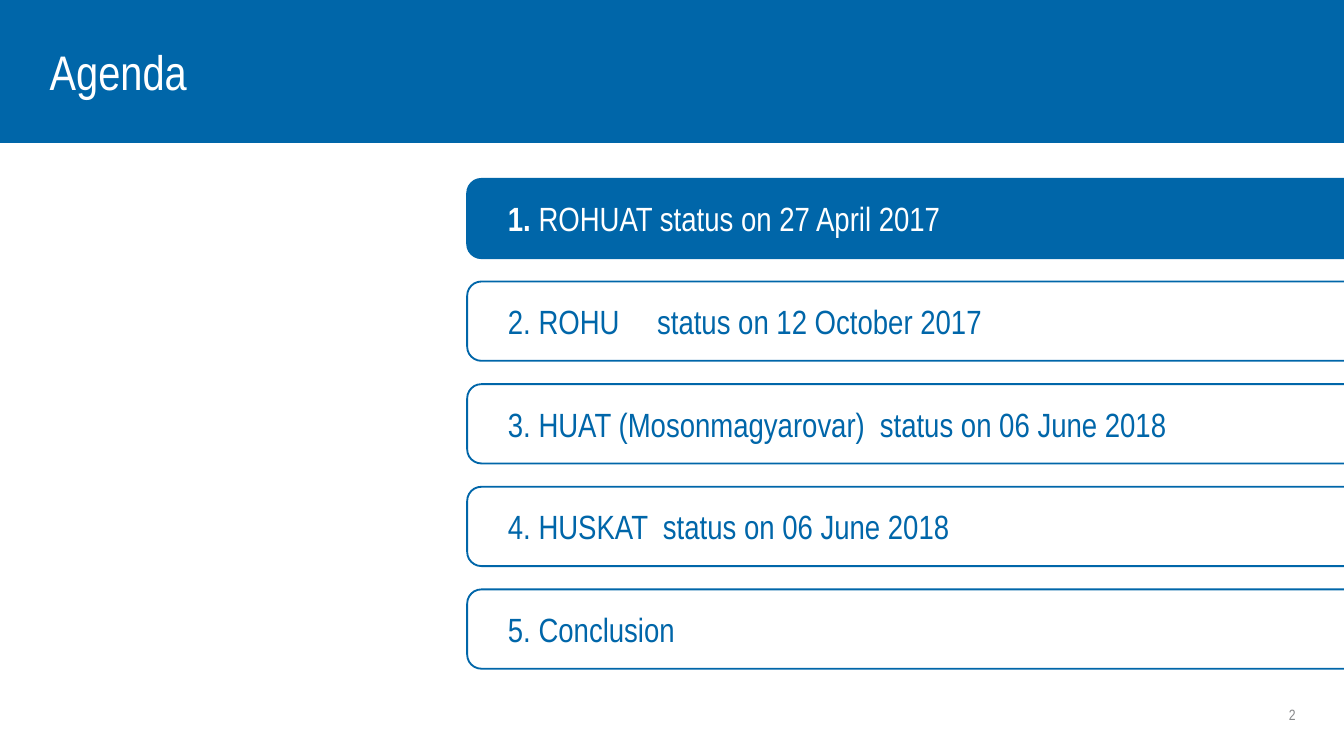
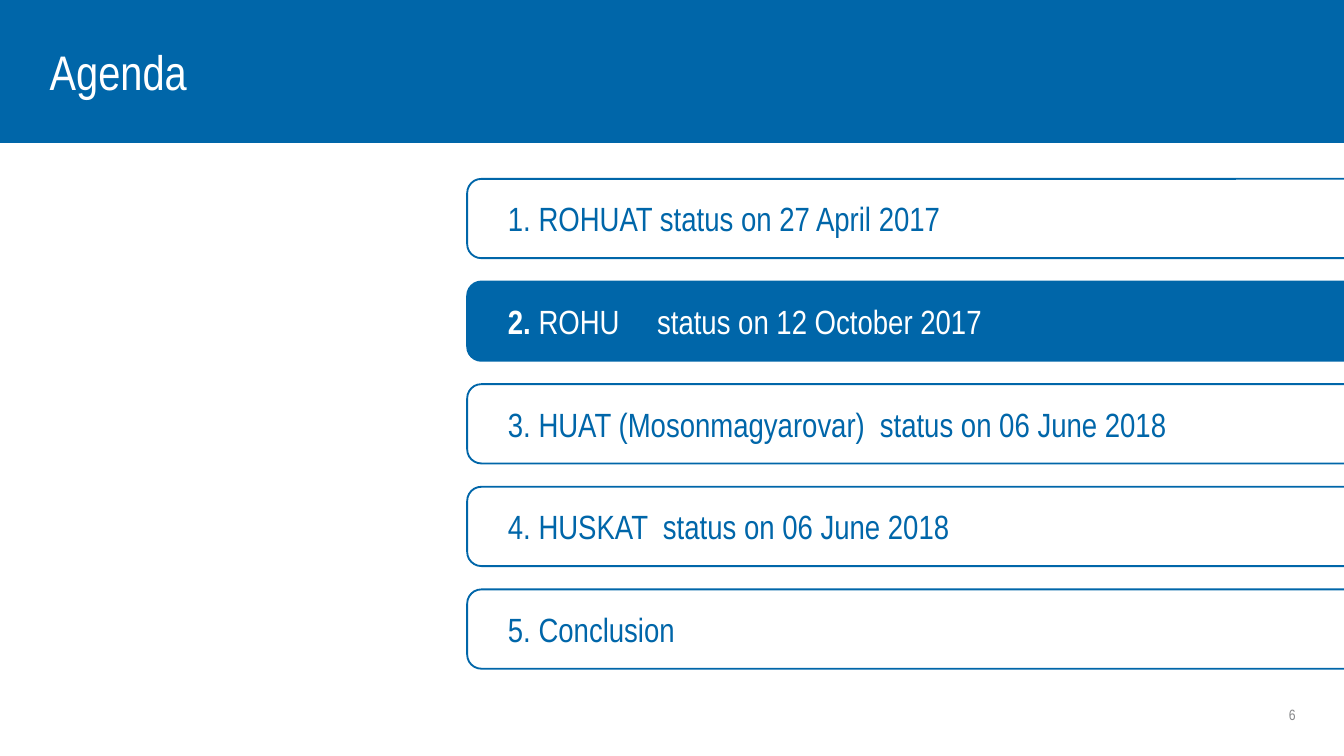
from pptx import Presentation
from pptx import util as u
from pptx.dml.color import RGBColor
from pptx.enum import shapes, text
from pptx.oxml import ns
from lxml import etree

BLUE = RGBColor(0x00, 0x66, 0xA9)
WHITE = RGBColor(0xFF, 0xFF, 0xFF)
GREY = RGBColor(0x87, 0x88, 0x8A)
FONT = "Arial Narrow"

SLIDE_SIZE = (25.4, 14.29)
BAND_BOX = (0, 0, 25.4, 2.69)
TITLE_BOX = (0.94, 0.84, 18.44, 0.99)
NUMBER_BOX = (21.49, 13.26, 3, 0.51)
AGENDA_BOX = (8.83, 3.38, 16.61, 9.26)
ROW_HEIGHT = 1.5
TEXT_INDENT = 0.77
TEXT_HEIGHT = 1.04
TEXT_WIDTH = 14.91

AGENDA = [
    ("ROHUAT status on 27 April 2017", None),
    ("ROHU\tstatus on 12 October 2017", 2.82),
    ("HUAT (Mosonmagyarovar)\tstatus on 06 June 2018", 7.03),
    ("HUSKAT\tstatus on 06 June 2018", 2.93),
    ("Conclusion", None),
]
SLIDES = [("2", 0), ("6", 1)]


def lengths(box):
    return [u.Cm(value) for value in box]


def apply(target, **values):
    for name, value in values.items():
        setattr(target, name, value)


def paint(shape, fill):
    shape.shadow.inherit = False
    if fill is None:
        shape.fill.background()
    else:
        shape.fill.solid()
        shape.fill.fore_color.rgb = fill
    shape.line.color.rgb = BLUE
    shape.line.width = u.Pt(1)


def write(shape, runs, size, color, align=text.PP_ALIGN.LEFT, tab=None):
    apply(shape.text_frame, margin_left=0, margin_top=0, margin_right=0, margin_bottom=0,
          word_wrap=True, auto_size=text.MSO_AUTO_SIZE.NONE,
          vertical_anchor=text.MSO_ANCHOR.MIDDLE)
    paragraph = shape.text_frame.paragraphs[0]
    paragraph.alignment = align
    if tab:
        properties = paragraph._p.get_or_add_pPr()
        tabs = etree.SubElement(properties, ns.qn("a:tabLst"))
        etree.SubElement(tabs, ns.qn("a:tab"), pos=str(u.Cm(tab)), algn="l")
    for words, bold in runs:
        run = paragraph.add_run()
        run.text = words
        apply(run.font, name=FONT, size=u.Pt(size), bold=bold)
        run.font.color.rgb = color


def add_header(slide, box, title_text):
    band = slide.shapes.add_shape(shapes.MSO_SHAPE.RECTANGLE, *lengths(box))
    paint(band, BLUE)
    title = slide.shapes.title
    title.element.addprevious(band.element)
    left, top, width, height = TITLE_BOX
    apply(title, left=u.Cm(box[0] + left), top=u.Cm(box[1] + top),
          width=u.Cm(width), height=u.Cm(height))
    write(title, [(title_text, False)], 26, WHITE)


def add_page_number(slide, box, number):
    shape = slide.shapes.add_textbox(*lengths(box))
    write(shape, [(number, False)], 8, GREY, text.PP_ALIGN.RIGHT)


def add_agenda_row(slide, box, number, entry, active):
    left, top, width, height = box
    middle = top + height / 2
    bar = slide.shapes.add_shape(
        shapes.MSO_SHAPE.ROUND_2_SAME_RECTANGLE,
        *lengths((left + (width - height) / 2, middle - width / 2, height, width)))
    bar.rotation = 270
    bar.adjustments[0] = 0.179
    bar.adjustments[1] = 0
    paint(bar, BLUE if active else None)

    words, tab = entry
    label = slide.shapes.add_textbox(
        *lengths((left + TEXT_INDENT, middle - TEXT_HEIGHT / 2, TEXT_WIDTH, TEXT_HEIGHT)))
    write(label, [(f"{number}. ", active), (words, False)], 18,
          WHITE if active else BLUE, tab=tab)


def add_agenda(slide, box, active_index):
    left, top, width, height = box
    pitch = (height - ROW_HEIGHT) / (len(AGENDA) - 1)
    for index, entry in enumerate(AGENDA):
        row_box = (left, top + index * pitch, width, ROW_HEIGHT)
        add_agenda_row(slide, row_box, index + 1, entry, index == active_index)


def main():
    presentation = Presentation()
    width, height = lengths(SLIDE_SIZE)
    apply(presentation, slide_width=width, slide_height=height)
    for number, active_index in SLIDES:
        slide = presentation.slides.add_slide(presentation.slide_layouts[5])
        add_header(slide, BAND_BOX, "Agenda")
        add_page_number(slide, NUMBER_BOX, number)
        add_agenda(slide, AGENDA_BOX, active_index)
    presentation.save("out.pptx")


if __name__ == "__main__":
    main()
